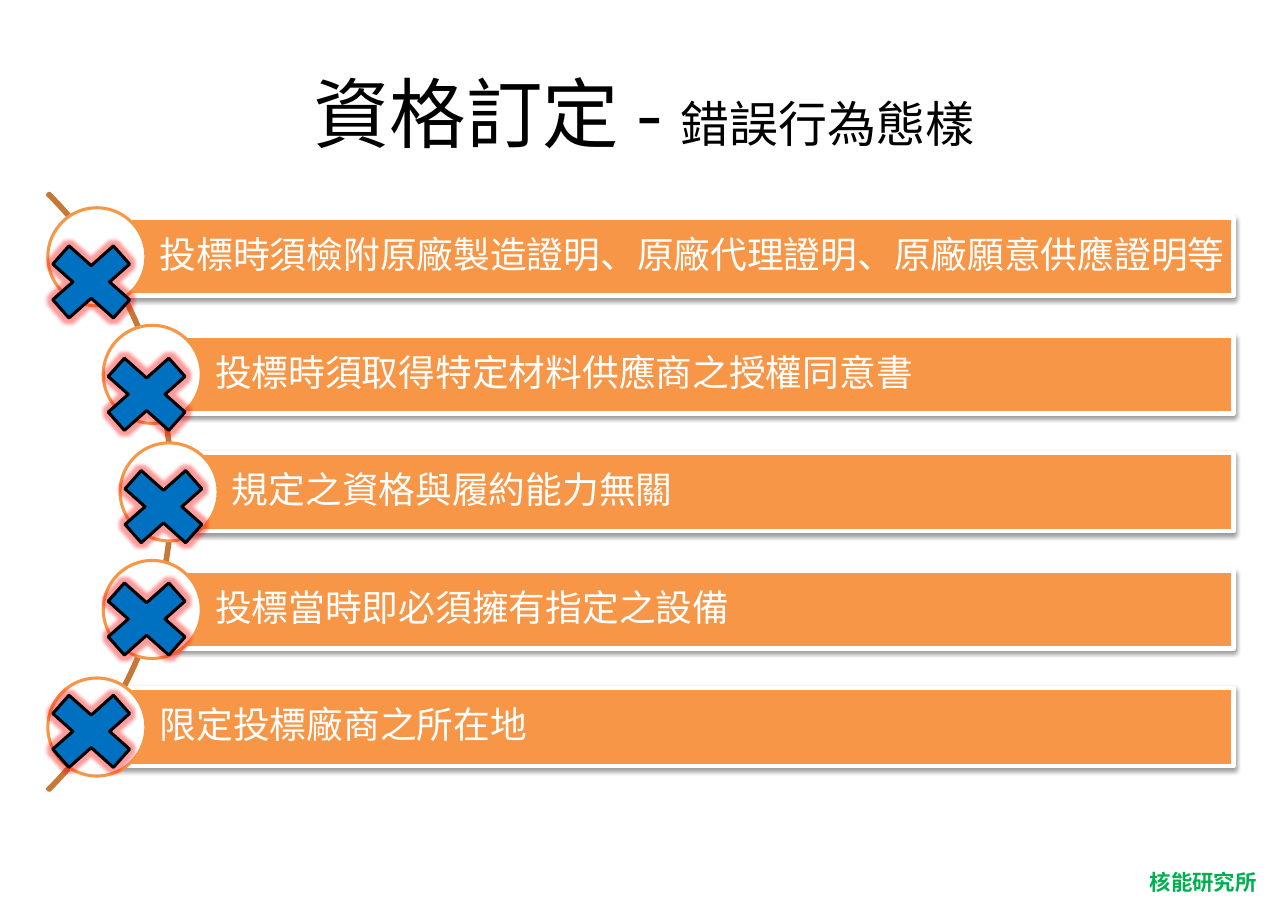
from dataclasses import dataclass
from math import sqrt

from lxml.etree import SubElement
from pptx import Presentation
from pptx.dml.color import RGBColor
from pptx.enum.shapes import MSO_SHAPE
from pptx.enum.text import MSO_ANCHOR, MSO_AUTO_SIZE, PP_ALIGN
from pptx.oxml.ns import qn
from pptx.util import Cm, Pt


@dataclass(frozen=True)
class Theme:
    """Colours, font and type sizes of the slide."""

    font: str = "Noto Sans CJK SC"
    black: str = "000000"
    white: str = "FFFFFF"
    orange: str = "F79646"
    brown: str = "C67838"
    blue: str = "0070C0"
    red: str = "FF0000"
    green: str = "00B050"
    title_size: int = 50
    subtitle_size: int = 32
    bar_size: int = 24
    footer_size: int = 14


@dataclass(frozen=True)
class Box:
    """A region of the slide in centimetres."""

    left: float
    top: float
    width: float
    height: float

    def lengths(self):
        """Return the four lengths for python-pptx."""
        return Cm(self.left), Cm(self.top), Cm(self.width), Cm(self.height)


THEME = Theme()
MISTAKES = [
    "投標時須檢附原廠製造證明、原廠代理證明、原廠願意供應證明等",
    "投標時須取得特定材料供應商之授權同意書",
    "規定之資格與履約能力無關",
    "投標當時即必須擁有指定之設備",
    "限定投標廠商之所在地",
]


def style_paragraph(paragraph, color, size=None, bold=None):
    """Set the shared font of a paragraph, East Asian face included."""
    font = paragraph.font
    font.name = THEME.font
    font.color.rgb = RGBColor.from_string(color)
    font.bold = bold
    if size:
        font.size = Pt(size)
    properties = paragraph._p.pPr.find(qn("a:defRPr"))
    SubElement(properties, qn("a:ea"), typeface=THEME.font)


def set_insets(frame, left, top, right, bottom):
    """Set the text margins in centimetres."""
    frame.margin_left, frame.margin_top = Cm(left), Cm(top)
    frame.margin_right, frame.margin_bottom = Cm(right), Cm(bottom)


def add_outlined(slide, kind, box, fill, line, line_width):
    """Add a preset shape with its fill and outline and no theme shadow."""
    shape = slide.shapes.add_shape(kind, *box.lengths())
    shape.shadow.inherit = False
    if fill:
        shape.fill.solid()
        shape.fill.fore_color.rgb = RGBColor.from_string(fill)
    else:
        shape.fill.background()
    shape.line.color.rgb = RGBColor.from_string(line)
    shape.line.width = Pt(line_width)
    return shape


def add_effect(shape, name, color, opacity, **settings):
    """Add a translucent glow or shadow to a shape."""
    effects = shape._element.spPr.find(qn("a:effectLst"))
    effect = SubElement(effects, qn(f"a:{name}"), **settings)
    tint = SubElement(effect, qn("a:srgbClr"), val=color)
    SubElement(tint, qn("a:alpha"), val=str(opacity * 1000))


def add_title(slide, box):
    """Fill the title placeholder with a large and a small part."""
    title = slide.shapes.title
    title.left, title.top, title.width, title.height = box.lengths()
    frame = title.text_frame
    frame.auto_size = MSO_AUTO_SIZE.NONE
    frame.vertical_anchor = MSO_ANCHOR.MIDDLE
    set_insets(frame, 0.28, 0.15, 0.28, 0.15)
    paragraph = frame.paragraphs[0]
    paragraph.alignment = PP_ALIGN.CENTER
    style_paragraph(paragraph, THEME.black)
    for text, size in [("資格訂定 - ", THEME.title_size),
                       ("錯誤行為態樣", THEME.subtitle_size)]:
        run = paragraph.add_run()
        run.text = text
        run.font.size = Pt(size)


def add_bar(slide, box, text):
    """Add one orange bar with its statement."""
    bar = add_outlined(slide, MSO_SHAPE.RECTANGLE, box, THEME.orange, THEME.white, 3)
    add_effect(bar, "outerShdw", THEME.black, 38, blurRad="40000",
               dist="20000", dir="5400000", rotWithShape="0")
    frame = bar.text_frame
    frame.word_wrap = True
    frame.vertical_anchor = MSO_ANCHOR.MIDDLE
    set_insets(frame, 1.45, 0.18, 0.1, 0.18)
    paragraph = frame.paragraphs[0]
    paragraph.text = text
    paragraph.alignment = PP_ALIGN.LEFT
    paragraph.line_spacing = 0.9
    style_paragraph(paragraph, THEME.white, THEME.bar_size)


def add_mistake_list(slide, box):
    """Add the arc, then bars and circles along it, then the crosses."""
    arc_size, arc_center, track_radius = 19.48, box.left - 6.84, 9.65
    bar_height, circle_size, row_pitch = 1.8, 2.26, 2.71
    cross_width, cross_height, cross_pitch = 2.69, 2.39, 2.59
    middle = box.top + box.height / 2

    arc_box = Box(arc_center - arc_size / 2, middle - arc_size / 2, arc_size, arc_size)
    arc = add_outlined(slide, MSO_SHAPE.BLOCK_ARC, arc_box, None, THEME.brown, 2)
    for index, value in enumerate((189, 27, 0.003)):
        arc.adjustments[index] = value

    cross_boxes = []
    for index, text in enumerate(MISTAKES):
        step = index - (len(MISTAKES) - 1) / 2
        drop = step * row_pitch
        x = arc_center + sqrt(track_radius ** 2 - drop ** 2)
        y = middle + drop
        width = box.left + box.width - x
        add_bar(slide, Box(x, y - bar_height / 2, width, bar_height), text)
        circle_box = Box(x - circle_size / 2, y - circle_size / 2, circle_size, circle_size)
        add_outlined(slide, MSO_SHAPE.OVAL, circle_box, THEME.white, THEME.orange, 2)
        cross_y = middle + 0.34 + step * cross_pitch
        cross_boxes.append(Box(x - 0.13 - cross_width / 2, cross_y - cross_height / 2,
                               cross_width, cross_height))

    for cross_box in cross_boxes:
        cross = add_outlined(slide, MSO_SHAPE.MATH_MULTIPLY, cross_box,
                             THEME.blue, THEME.black, 2)
        add_effect(cross, "glow", THEME.red, 40, rad="63500")


def add_footer(slide, box):
    """Add the name of the institute at the lower right."""
    frame = slide.shapes.add_textbox(*box.lengths()).text_frame
    frame.word_wrap = False
    frame.auto_size = MSO_AUTO_SIZE.SHAPE_TO_FIT_TEXT
    paragraph = frame.paragraphs[0]
    paragraph.text = "核能研究所"
    style_paragraph(paragraph, THEME.green, THEME.footer_size, bold=True)


def main():
    """Build the slide and save it."""
    presentation = Presentation()
    presentation.slide_width, presentation.slide_height = Cm(29.7), Cm(21)
    slide = presentation.slides.add_slide(presentation.slide_layouts[5])
    add_footer(slide, Box(26.26, 19.91, 3, 0.86))
    add_title(slide, Box(1.47, 0.84, 26.75, 3.5))
    add_mistake_list(slide, Box(1.09, 4.44, 27.36, 13.8))
    presentation.save("out.pptx")


if __name__ == "__main__":
    main()
